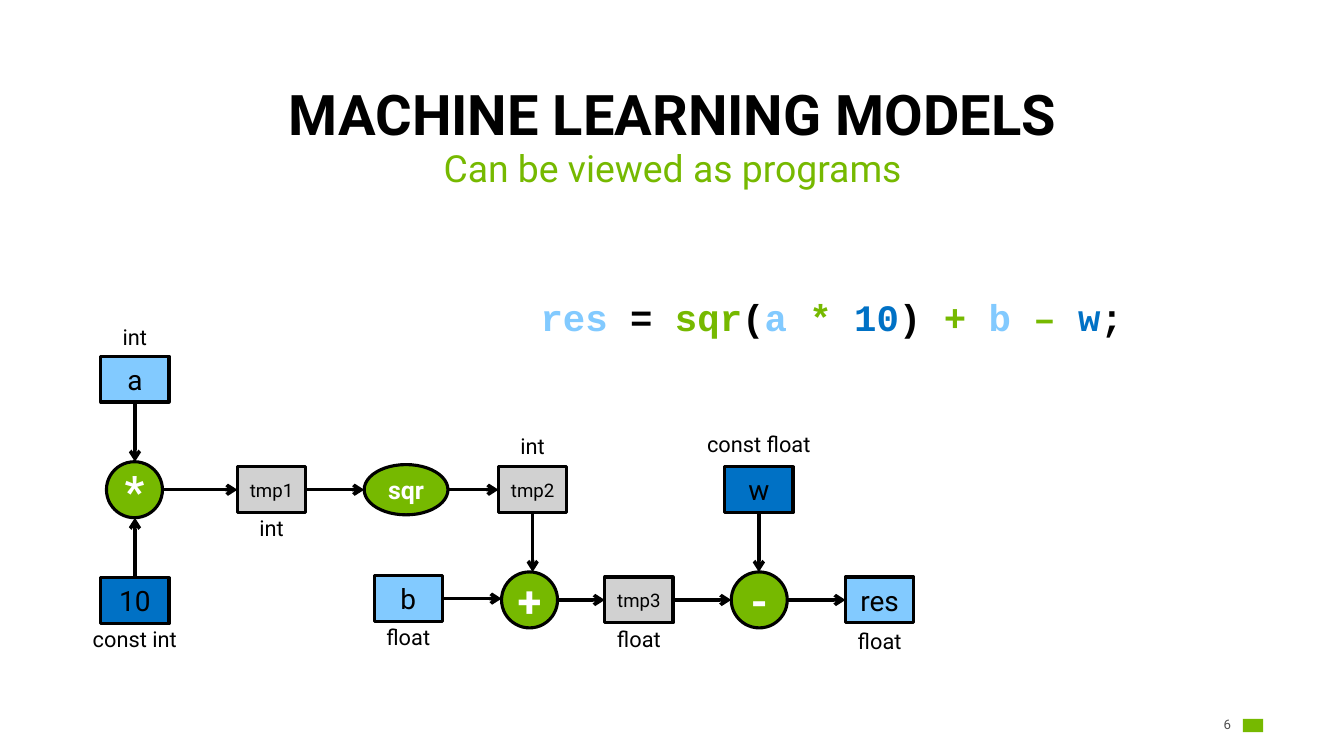
from collections import namedtuple

from lxml import etree
from pptx import Presentation
from pptx.dml.color import RGBColor
from pptx.enum.shapes import MSO_CONNECTOR, MSO_SHAPE
from pptx.enum.text import MSO_ANCHOR, PP_ALIGN
from pptx.oxml.ns import qn
from pptx.util import Cm, Pt

RECT, OVAL = MSO_SHAPE.RECTANGLE, MSO_SHAPE.OVAL
STRAIGHT = MSO_CONNECTOR.STRAIGHT
LEFT, CENTER, RIGHT = PP_ALIGN.LEFT, PP_ALIGN.CENTER, PP_ALIGN.RIGHT
TOP, MIDDLE, BOTTOM = MSO_ANCHOR.TOP, MSO_ANCHOR.MIDDLE, MSO_ANCHOR.BOTTOM

COLORS = {
    "black": "000000", "white": "FFFFFF", "green": "76B900",
    "sky": "82CAFF", "blue": "0071C5", "gray": "D1D1D1", "page": "505050",
}
SANS, MONO = "Roboto", "Courier New"

Style = namedtuple("Style", "shape width height fill size color bold")
VARIABLE = Style(RECT, 1.55, 1.04, "sky", 18, "black", False)
CONSTANT = VARIABLE._replace(fill="blue")
TEMPORARY = VARIABLE._replace(fill="gray", size=12)
OPERATOR = Style(OVAL, 1.27, 1.27, "green", 28, "white", True)
FUNCTION = OPERATOR._replace(width=1.9, height=1.14, size=16)

UPPER, LOWER = 11.11, 13.61  # centre lines of the two rows

# text: style, centre x, centre y
NODES = {
    "a": (VARIABLE, 3.06, 8.6),
    "10": (CONSTANT, 3.06, 13.63),
    "tmp1": (TEMPORARY, 6.16, UPPER),
    "sqr": (FUNCTION, 9.21, UPPER),
    "tmp2": (TEMPORARY, 12.08, UPPER),
    "w": (CONSTANT, 17.21, UPPER),
    "b": (VARIABLE, 9.26, 13.58),
    "tmp3": (TEMPORARY, 14.49, LOWER),
    "res": (VARIABLE, 19.95, LOWER),
    "*": (OPERATOR, 3.05, UPPER),
    "+": (OPERATOR, 12.01, LOWER),
    "-": (OPERATOR, 17.22, LOWER),
}
ACROSS = [("*", "tmp1"), ("tmp1", "sqr"), ("sqr", "tmp2"), ("b", "+"),
          ("+", "tmp3"), ("tmp3", "-"), ("-", "res")]
UPRIGHT = [("a", "*"), ("10", "*"), ("tmp2", "+"), ("w", "-")]

# node, type name, offset of the label centre from the node centre
TYPES = [
    ("a", "int", -0.91), ("10", "const int", 0.89), ("tmp1", "int", 0.91),
    ("tmp2", "int", -0.96), ("w", "const float", -1.01),
    ("b", "float", 0.91), ("tmp3", "float", 0.91), ("res", "float", 0.97),
]
CODE = [
    ("res", "sky"), (" = ", "black"), ("sqr", "green"), ("(", "black"),
    ("a ", "sky"), ("* ", "green"), ("10", "blue"), (") ", "black"),
    ("+ ", "green"), ("b ", "sky"), ("– ", "green"), ("w", "blue"),
    (";", "black"),
]


def rgb(name):
    return RGBColor.from_string(COLORS[name])


def add_span(para, text, size, color, bold=False, font=SANS):
    span = para.add_run()
    span.text = text
    span.font.size, span.font.name, span.font.bold = Pt(size), font, bold
    span.font.color.rgb = rgb(color)


def add_text(page, place, spans, size, align=CENTER, anchor=MIDDLE,
             bold=False, font=SANS, wrap=False, spacing=0.9, inset=None):
    """Add a one-paragraph text box; spans are (text, color) pairs."""
    frame = page.shapes.add_textbox(*map(Cm, place)).text_frame
    frame.word_wrap = wrap
    frame.vertical_anchor = anchor
    if inset is not None:
        frame.margin_left = frame.margin_right = Cm(inset)
        frame.margin_top = frame.margin_bottom = Cm(inset)
    para = frame.paragraphs[0]
    para.alignment, para.line_spacing = align, spacing
    for text, color in spans:
        add_span(para, text, size, color, bold, font)


def add_plain_shape(page, kind, place, fill):
    box = page.shapes.add_shape(kind, *map(Cm, place))
    box.shadow.inherit = False
    box.fill.solid()
    box.fill.fore_color.rgb = rgb(fill)
    box.line.fill.background()
    return box


def add_node(page, text):
    style, x, y = NODES[text]
    place = (x - style.width / 2, y - style.height / 2, style.width, style.height)
    box = add_plain_shape(page, style.shape, place, style.fill)
    box.line.color.rgb = rgb("black")
    box.line.width = Pt(2)
    frame = box.text_frame
    frame.word_wrap = False
    frame.vertical_anchor = MIDDLE
    para = frame.paragraphs[0]
    para.alignment = CENTER
    add_span(para, text, style.size, style.color, style.bold)


def add_arrow(page, start, end):
    line = page.shapes.add_connector(STRAIGHT, *map(Cm, start + end))
    line.line.color.rgb = rgb("black")
    line.line.width = Pt(2.25)
    etree.SubElement(line.line._get_or_add_ln(), qn("a:tailEnd"), type="arrow")
    etree.SubElement(line._element.spPr, qn("a:effectLst"))


def link_across(page, source, target):
    left, x1, y = NODES[source]
    right, x2, _ = NODES[target]
    add_arrow(page, (x1 + left.width / 2, y), (x2 - right.width / 2, y))


def link_upright(page, source, target):
    first, x, y1 = NODES[source]
    last, _, y2 = NODES[target]
    way = 1 if y2 > y1 else -1
    add_arrow(page, (x, y1 + way * first.height / 2),
              (x, y2 - way * last.height / 2))


def add_type(page, node, text, offset):
    _, x, y = NODES[node]
    width, height = 2.9, 0.79
    add_text(page, (x - width / 2, y + offset - height / 2, width, height),
             [(text, "black")], 14)


def main():
    deck = Presentation()
    deck.slide_width, deck.slide_height = Cm(30.48), Cm(17.15)
    page = deck.slides.add_slide(deck.slide_layouts[6])

    add_text(page, (27.13, 16.21, 0.79, 0.46), [("6", "page")], 8.5,
             align=RIGHT, spacing=1, inset=0)
    add_plain_shape(page, RECT, (28.19, 16.31, 0.46, 0.3), "green")
    add_text(page, (1.4, 1.83, 27.71, 1.65),
             [("MACHINE LEARNING MODELS", "black")], 36,
             anchor=BOTTOM, bold=True, wrap=True)
    add_text(page, (1.4, 3.28, 27.71, 1.45),
             [("Can be viewed as programs", "green")], 24,
             anchor=TOP, wrap=True)
    add_text(page, (12.01, 6.65, 13.82, 1.19), CODE, 24,
             align=LEFT, bold=True, font=MONO)

    for pair in ACROSS:
        link_across(page, *pair)
    for pair in UPRIGHT:
        link_upright(page, *pair)
    for text in NODES:
        add_node(page, text)
    for label in TYPES:
        add_type(page, *label)
    deck.save("out.pptx")


if __name__ == "__main__":
    main()
